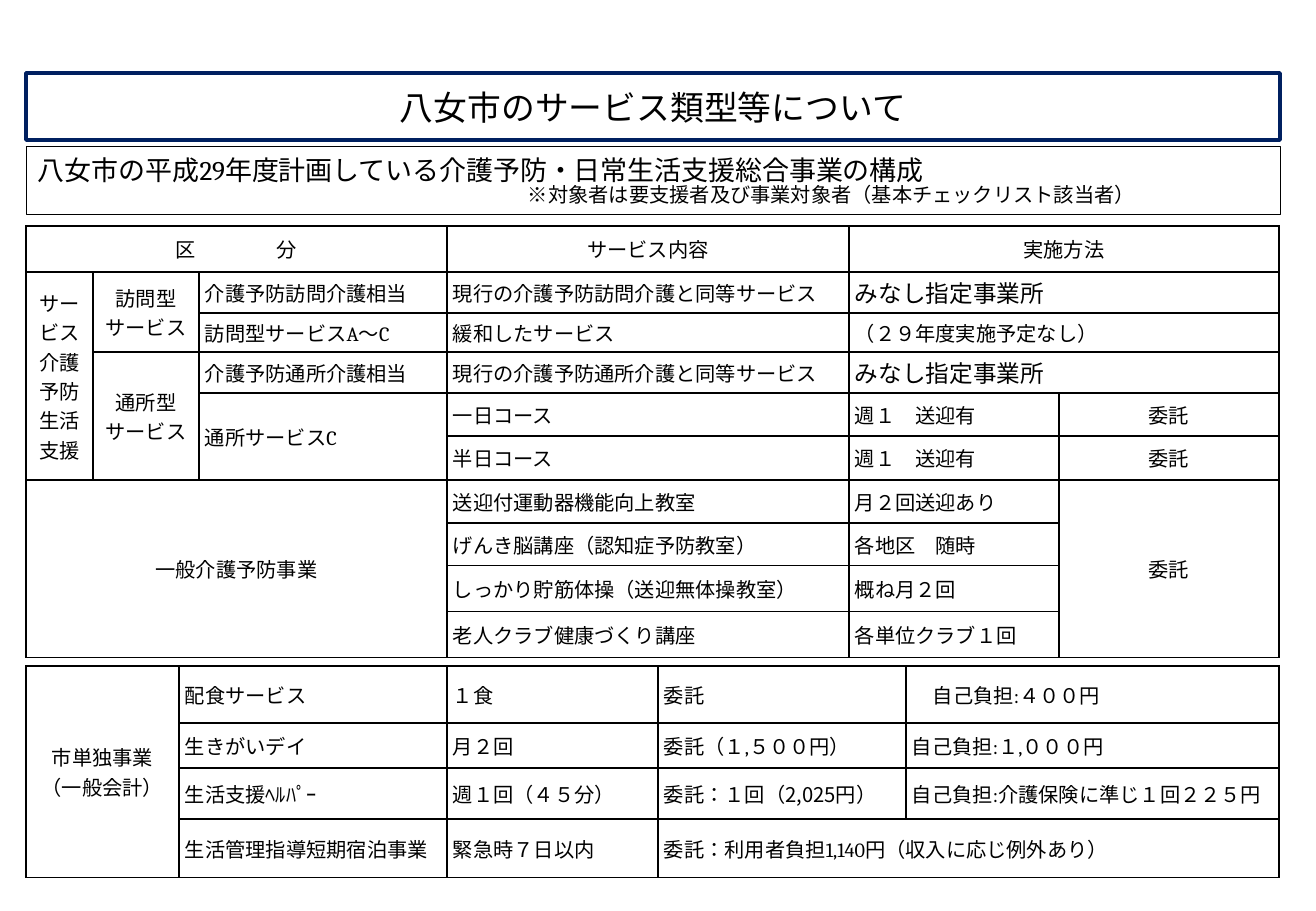
"""Builds the slide on the service types of Yame City."""
from lxml import etree
from pptx import Presentation
from pptx.dml.color import RGBColor
from pptx.enum.lang import MSO_LANGUAGE_ID
from pptx.enum.shapes import MSO_SHAPE
from pptx.enum.text import MSO_ANCHOR, PP_ALIGN
from pptx.oxml.ns import qn
from pptx.util import Pt

PX = 7526
LEFT, WIDTH = 26, 1254
RECT = MSO_SHAPE.RECTANGLE
MIDDLE = MSO_ANCHOR.MIDDLE
START, CENTER, JUST = PP_ALIGN.LEFT, PP_ALIGN.CENTER, PP_ALIGN.JUSTIFY
JAPAN = MSO_LANGUAGE_ID.JAPANESE
LATIN, ASIAN = "Cambria", "Noto Sans CJK JP"
COLORS = {"text": "000000", "edge": "000000", "title": "002060"}


def write(frame, text, size, align):
    """Fill a frame; lines split at newlines, Asian font between bars."""
    for n, line in enumerate(text.split("\n")):
        para = frame.add_paragraph() if n else frame.paragraphs[0]
        para.alignment = align
        for k, part in enumerate(line.split("|")):
            run = para.add_run()
            run.text = part
            style = {"size": Pt(size), "name": ASIAN if k % 2 else LATIN,
                     "language_id": JAPAN}
            for key, value in style.items():
                setattr(run.font, key, value)
            run.font.color.rgb = RGBColor.from_string(COLORS["text"])
            face = etree.SubElement(run.font._element, qn("a:ea"))
            face.set("typeface", ASIAN)


def grid(top, cols, rows, texts, spans, mids, align):
    """Add a ruled table; mids holds the centred columns."""
    frame = slide.shapes.add_table(len(rows), len(cols), LEFT * PX, top * PX,
                                   sum(cols) * PX, sum(rows) * PX)
    table = frame.table
    table.first_row = table.horz_banding = False
    for col, wide in zip(table.columns, cols):
        col.width = wide * PX
    for row, tall in zip(table.rows, rows):
        row.height = tall * PX
    inset = {"margin_left": 6 * PX, "margin_right": 6 * PX, "margin_top": 0,
             "margin_bottom": 0, "vertical_anchor": MIDDLE}
    for r, line in enumerate(texts):
        for c, text in enumerate(line):
            cell = table.cell(r, c)
            for key, value in inset.items():
                setattr(cell, key, value)
            cell.fill.background()
            props = cell._tc.get_or_add_tcPr()
            for n, side in enumerate(("lnL", "lnR", "lnT", "lnB")):
                edge = etree.Element(qn("a:" + side), w=str(Pt(1)))
                fill = etree.SubElement(edge, qn("a:solidFill"))
                etree.SubElement(fill, qn("a:srgbClr"), val=COLORS["edge"])
                props.insert(n, edge)
            if text:
                size = 14 if text == DEEMED else 12
                write(cell.text_frame, text, size, CENTER if c in mids else align)
    for r, c, tall, wide in spans:
        table.cell(r, c).merge(table.cell(r + tall - 1, c + wide - 1))
    return table


deck = Presentation()
deck.slide_width, deck.slide_height = 1316 * PX, 911 * PX
slide = deck.slides.add_slide(deck.slide_layouts[6])

DEEMED = "みなし指定事業所"
HEAD = ["区|分", "", "", "サービス内容", "実施方法", ""]
BODY = [
    ["サービス\n介護予防生活支援", "訪問型\nサービス", "介護予防訪問介護相当",
     "現行の介護予防訪問介護と同等サービス", DEEMED, ""],
    ["", "", "訪問型サービスA～C", "緩和したサービス", "（２９年度実施予定なし）", ""],
    ["", "通所型\nサービス", "介護予防通所介護相当",
     "現行の介護予防通所介護と同等サービス", DEEMED, ""],
    ["", "", "通所サービスC", "一日コース", "週１　送迎有", "委託"],
    ["", "", "", "半日コース", "週１　送迎有", "委託"],
    ["一般介護予防事業", "", "", "送迎付運動器機能向上教室", "月２回送迎あり", "委託"],
    ["", "", "", "げんき脳講座（認知症予防教室）", "各地区　随時", ""],
    ["", "", "", "しっかり貯筋体操（送迎無体操教室）", "概ね月２回", ""],
    ["", "", "", "老人クラブ健康づくり講座", "各単位クラブ１回", ""],
]
SPANS = [(0, 0, 1, 3), (0, 4, 1, 2), (1, 0, 5, 1), (1, 1, 2, 1), (1, 4, 1, 2),
         (2, 4, 1, 2), (3, 1, 3, 1), (3, 4, 1, 2), (4, 2, 2, 1),
         (6, 0, 4, 3), (6, 5, 4, 1)]
types = grid(226, [67, 106, 248, 402, 210, 220],
             [46, 41, 39, 41, 43, 44, 43, 43, 46, 46],
             [HEAD] + BODY, SPANS, {0, 1, 5}, JUST)
for c in (3, 4):
    types.cell(0, c).text_frame.paragraphs[0].alignment = CENTER
first = types.cell(0, 0).text_frame.paragraphs[0].runs[0]
first.font._element.set("spc", "4800")
types.cell(1, 0)._tc.get_or_add_tcPr().set("vert", "eaVert")

CITY = [
    ["市単独事業（一般会計）", "配食サービス", "１食", "委託", "自己負担:４００円"],
    ["", "生きがいデイ", "月２回", "委託（１,５００円）", "自己負担:１,０００円"],
    ["", "生活支援ﾍﾙﾊﾟｰ", "週１回（４５分）", "委託：１回（|2,025|円）",
     "自己負担:介護保険に準じ１回２２５円"],
    ["", "生活管理指導短期宿泊事業", "緊急時７日以内",
     "委託：利用者負担1,140円（収入に応じ例外あり）", ""],
]
city = grid(666, [153, 268, 211, 248, 373], [57, 45, 51, 58], CITY,
            [(0, 0, 4, 1), (3, 3, 1, 2)], {0}, START)
meal = city.cell(0, 4).text_frame.paragraphs[0]
meal._p.get_or_add_pPr().set("indent", str(21 * PX))

PLAN = ("八女市の平成29年度計画している介護予防・日常生活支援総合事業の構成\n"
        "※対象者は要支援者及び事業対象者（基本チェックリスト該当者）")
BOXES = [
    (146, 69, PLAN, 16, START, "edge", 0.5),
    (73, 67, "八女市のサービス類型等について", 20, CENTER, "title", 2.25),
]
for top, tall, text, size, align, color, weight in BOXES:
    box = slide.shapes.add_shape(RECT, LEFT * PX, top * PX, WIDTH * PX, tall * PX)
    box.shadow.inherit = False
    box.fill.background()
    box.line.color.rgb = RGBColor.from_string(COLORS[color])
    box.line.width = Pt(weight)
    frame = box.text_frame
    style = {"word_wrap": True, "vertical_anchor": MIDDLE, "margin_left": 12 * PX,
             "margin_right": 12 * PX, "margin_top": 0, "margin_bottom": 0}
    for key, value in style.items():
        setattr(frame, key, value)
    write(frame, text, size, align)
    for note in frame.paragraphs[1:]:
        note.line_spacing = 0.85
        note.runs[0].font.size = Pt(12)
        note.runs[0].font.name = "Arial"
        note._p.get_or_add_pPr().set("marL", str(490 * PX))

deck.save("out.pptx")
